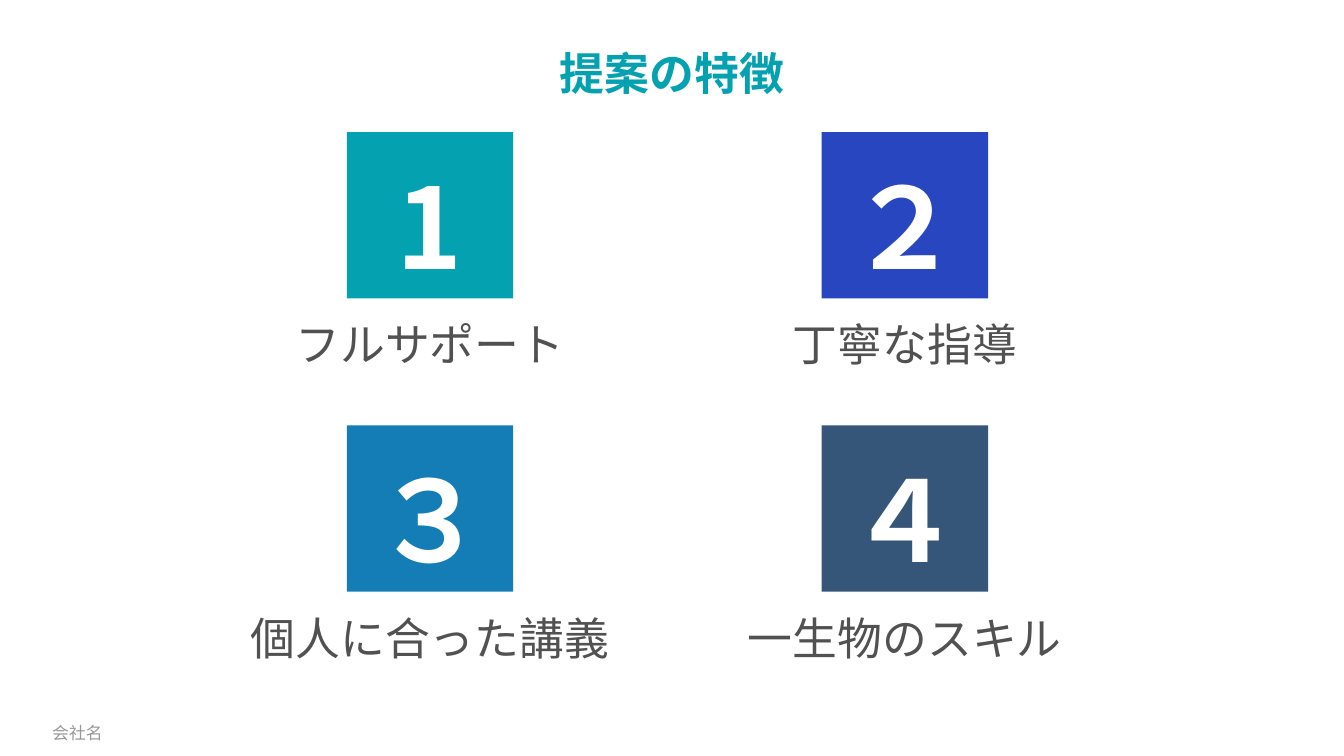
from dataclasses import dataclass

from lxml.etree import SubElement
from pptx import Presentation
from pptx.dml.color import RGBColor
from pptx.enum.shapes import MSO_SHAPE as Shape
from pptx.enum.text import MSO_ANCHOR as Anchor, PP_ALIGN as Align
from pptx.oxml.ns import qn
from pptx.util import Inches, Pt


@dataclass(frozen=True)
class Theme:
    teal: str = "04A2B1"
    indigo: str = "2746C0"
    blue: str = "147DB6"
    slate: str = "355679"
    white: str = "FFFFFF"
    label: str = "515151"
    footer: str = "989898"
    font: str = "Noto Sans CJK JP"
    footer_font: str = "Calibri"
    number_size: int = 80
    text_size: int = 32
    footer_size: int = 12


theme = Theme()


def add_text(shape, text, size, color, font=theme.font, bold=False,
             align=Align.CENTER, top_inset=0.05):
    """Write one run and return its paragraph."""
    frame = shape.text_frame
    frame.word_wrap = True
    frame.vertical_anchor = Anchor.MIDDLE
    frame.margin_left = frame.margin_right = Inches(0.1)
    frame.margin_top, frame.margin_bottom = Inches(top_inset), Inches(0.05)
    para = frame.paragraphs[0]
    para.alignment = align
    span = para.add_run()
    span.text = text
    span.font.size = Pt(size)
    span.font.bold = bold
    span.font.color.rgb = RGBColor.from_string(color)
    span.font.name = font
    # East Asian glyphs take their typeface from a:ea
    SubElement(span.font._element, qn("a:ea"), typeface=font)
    return para


deck = Presentation()
deck.slide_width, deck.slide_height = Inches(13.33), Inches(7.5)
page = deck.slides.add_slide(deck.slide_layouts[5])

# Title
title = page.shapes.title
title.left, title.top = Inches(0), Inches(0.36)
title.width, title.height = Inches(13.33), Inches(0.67)
para = add_text(title, "提案の特徴", theme.text_size, theme.teal, bold=True)
para.line_spacing = 1.1

# Company name
company = page.shapes.add_textbox(Inches(0.42), Inches(7.07), Inches(3.94), Inches(0.4))
add_text(company, "会社名", theme.footer_size, theme.footer,
         font=theme.footer_font, align=Align.LEFT)

# Four features in a two by two grid: number, label, label width, tile color
features = [
    ("1", "フルサポート", 3.94, theme.teal),
    ("２", "丁寧な指導", 3.19, theme.indigo),
    ("３", "個人に合った講義", 5.28, theme.blue),
    ("４", "一生物のスキル", 3.48, theme.slate),
]
tile_size = 1.65
first_left, first_top = 3.44, 1.31
column_step, row_step = 4.71, 2.91

for index, (number, label, label_width, color) in enumerate(features):
    row, column = divmod(index, 2)
    left = first_left + column * column_step
    top = first_top + row * row_step

    # Numbered tile
    tile = page.shapes.add_shape(Shape.RECTANGLE, Inches(left), Inches(top),
                                 Inches(tile_size), Inches(tile_size))
    tile.shadow.inherit = False
    tile.fill.solid()
    tile.fill.fore_color.rgb = RGBColor.from_string(color)
    tile.line.fill.background()
    add_text(tile, number, theme.number_size, theme.white, bold=True, top_inset=0.24)

    # Label centred below the tile
    label_left = left + (tile_size - label_width) / 2
    box = page.shapes.add_textbox(Inches(label_left), Inches(top + tile_size),
                                  Inches(label_width), Inches(0.87))
    para = add_text(box, label, theme.text_size, theme.label, top_inset=0.08)
    para.space_after = Pt(6)

deck.save("out.pptx")
